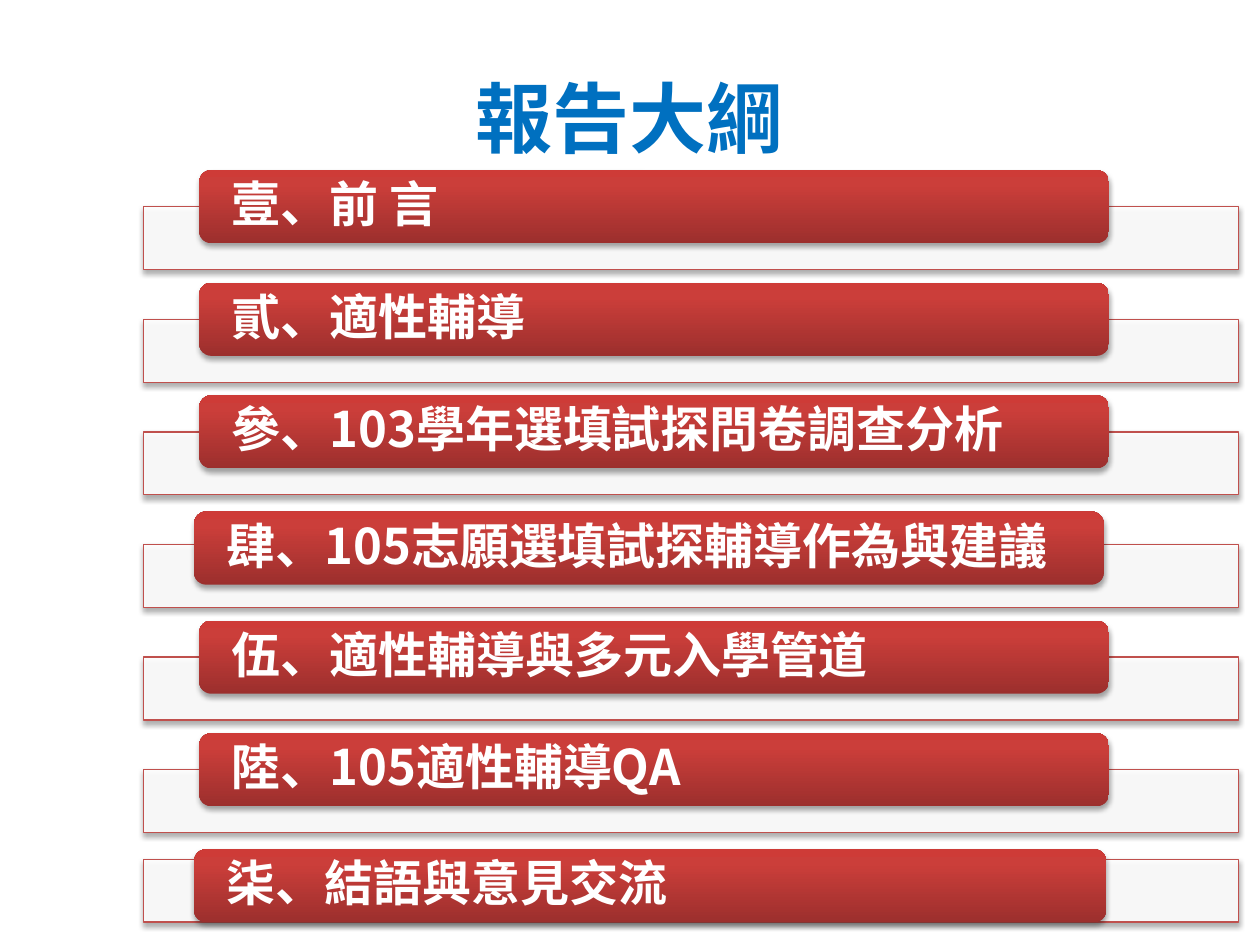
from dataclasses import dataclass

import pptx
import pptx.dml.color
import pptx.enum.shapes
import pptx.enum.text
import pptx.oxml
import pptx.oxml.ns
import pptx.util
from pptx.util import Pt

RGB = pptx.dml.color.RGBColor
SHAPE = pptx.enum.shapes.MSO_SHAPE
ALIGN = pptx.enum.text.PP_ALIGN
ANCHOR = pptx.enum.text.MSO_ANCHOR
qn = pptx.oxml.ns.qn
NS = pptx.oxml.ns.nsdecls("a")


@dataclass(frozen=True)
class Theme:
    font: str = "Noto Sans CJK SC"
    title_size: float = 44
    item_size: float = 28
    title: str = "0070C0"
    white: str = "FFFFFF"
    outline: str = "C0504D"
    gradient: tuple = ((0, "9C2F2D"), (80, "CB3E3A"), (100, "CE3B37"))


@dataclass(frozen=True)
class Box:
    left: float
    top: float
    width: float
    height: float

    def lengths(self) -> tuple:
        return Pt(self.left), Pt(self.top), Pt(self.width), Pt(self.height)


@dataclass(frozen=True)
class Item:
    text: str
    plate: Box
    bar: Box


THEME = Theme()

# Outline rows: an even pitch, with bars 4 and 7 nudged out of line
PITCH = 64.35
LABELS = (
    "壹、前 言",
    "貳、適性輔導",
    "參、103學年選填試探問卷調查分析",
    "肆、105志願選填試探輔導作為與建議",
    "伍、適性輔導與多元入學管道",
    "陸、105適性輔導QA",
    "柒、結語與意見交流",
)
PLATE_TOPS = [118.1 + i * PITCH for i in range(6)] + [491]
BARS = [Box(113.8, 97.2 + i * PITCH, 519.8, 41.8) for i in range(6)]
BARS[3] = Box(110.9, 292.3, 519.8, 41.8)
BARS.append(Box(110.9, 485.3, 521.3, 41.8))
ITEMS = [
    Item(text, Box(82.1, top, 625.7, 36), bar)
    for text, top, bar in zip(LABELS, PLATE_TOPS, BARS)
]


def add_shadow(s) -> None:
    s.shadow.inherit = False
    effects = s._element.spPr.find(qn("a:effectLst"))
    effects.append(pptx.oxml.parse_xml(
        f'<a:outerShdw {NS} blurRad="{Pt(3.1)}" dist="{Pt(1.8)}" dir="5400000" '
        'rotWithShape="0"><a:srgbClr val="000000"><a:alpha val="35000"/>'
        '</a:srgbClr></a:outerShdw>'))


def write(tf, text: str, size: float, color: str, align) -> None:
    tf.word_wrap = True
    tf.vertical_anchor = ANCHOR.MIDDLE
    p = tf.paragraphs[0]
    p.alignment = align
    r = p.add_run()
    r.text = text
    r.font.size = Pt(size)
    r.font.bold = True
    r.font.name = THEME.font
    r.font.color.rgb = RGB.from_string(color)
    ea = pptx.oxml.parse_xml(f'<a:ea {NS} typeface="{THEME.font}"/>')
    r._r.rPr.find(qn("a:latin")).addnext(ea)


def add_plate(shapes, box: Box) -> None:
    s = shapes.add_shape(SHAPE.RECTANGLE, *box.lengths())
    s.fill.solid()
    s.fill.fore_color.rgb = RGB.from_string(THEME.white)
    color = s._element.spPr.find(qn("a:solidFill")).find(qn("a:srgbClr"))
    color.append(pptx.oxml.parse_xml(f'<a:alpha {NS} val="90000"/>'))
    s.line.color.rgb = RGB.from_string(THEME.outline)
    s.line.width = Pt(0.75)
    add_shadow(s)


def add_bar(shapes, box: Box, text: str) -> None:
    s = shapes.add_shape(SHAPE.ROUNDED_RECTANGLE, *box.lengths())
    s.fill.gradient()
    s.fill.gradient_angle = 90
    stops = s._element.spPr.find(qn("a:gradFill")).find(qn("a:gsLst"))
    for stop in list(stops):
        stops.remove(stop)
    for percent, color in THEME.gradient:
        stops.append(pptx.oxml.parse_xml(
            f'<a:gs {NS} pos="{percent * 1000}"><a:srgbClr val="{color}"/></a:gs>'))
    s.line.fill.background()
    add_shadow(s)
    tf = s.text_frame
    tf.margin_left = tf.margin_right = Pt(16.6)
    tf.margin_top = tf.margin_bottom = Pt(0)
    write(tf, text, THEME.item_size, THEME.white, ALIGN.LEFT)
    tf.paragraphs[0].line_spacing = 0.9


def main() -> None:
    prs = pptx.Presentation()
    prs.slide_width, prs.slide_height = Pt(720), Pt(540)
    shapes = prs.slides.add_slide(prs.slide_layouts[6]).shapes

    # Title
    title = shapes.add_textbox(*Box(36, 21.6, 648, 90).lengths())
    write(title.text_frame, "報告大綱", THEME.title_size, THEME.title, ALIGN.CENTER)

    # Outline
    for item in ITEMS:
        add_plate(shapes, item.plate)
        add_bar(shapes, item.bar, item.text)

    prs.save("out.pptx")


if __name__ == "__main__":
    main()
